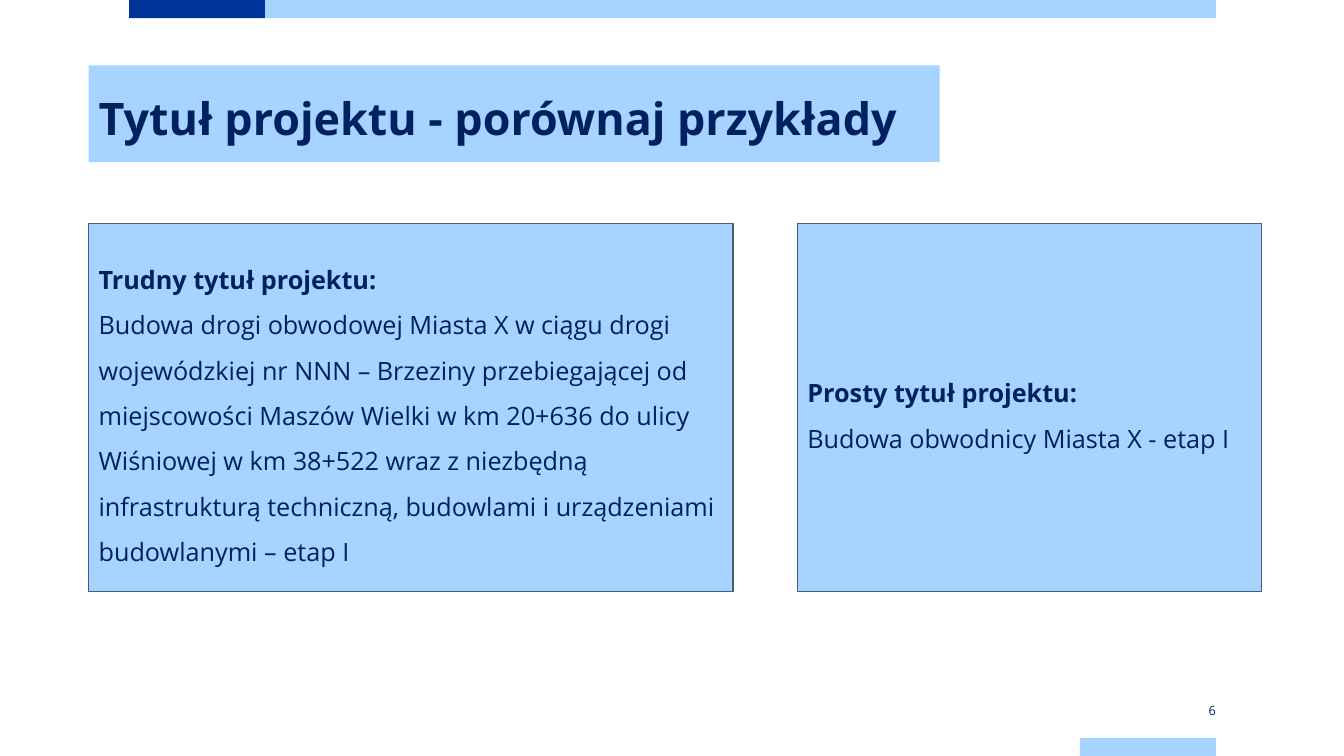
from dataclasses import dataclass

from pptx import Presentation
from pptx.dml.color import RGBColor
from pptx.enum.shapes import MSO_SHAPE
from pptx.enum.text import MSO_ANCHOR, PP_ALIGN
from pptx.util import Inches, Pt

RECT = MSO_SHAPE.RECTANGLE
TOP, MIDDLE = MSO_ANCHOR.TOP, MSO_ANCHOR.MIDDLE
LEFT, RIGHT = PP_ALIGN.LEFT, PP_ALIGN.RIGHT

FONT = "Open Sans"
NAVY, BLUE, SKY = "002060", "003399", "A6D3FF"
BORDER, NUMBER = "495C70", "002073"


@dataclass
class Box:
    left: float
    top: float
    width: float
    height: float


@dataclass
class Bar:
    box: Box
    fill: str


@dataclass
class Example:
    box: Box
    heading: str
    body: str


BARS = [
    Bar(Box(1.28, 0, 1.35, 0.18), BLUE),
    Bar(Box(2.63, 0, 9.43, 0.18), SKY),
    Bar(Box(10.71, 7.32, 1.35, 0.18), SKY),
    Bar(Box(0.88, 0.65, 8.44, 0.96), SKY),
]

EXAMPLES = [
    Example(
        Box(0.88, 2.22, 6.39, 3.65),
        "Trudny tytuł projektu:",
        "Budowa drogi obwodowej Miasta X w ciągu drogi wojewódzkiej nr NNN – "
        "Brzeziny przebiegającej od miejscowości Maszów Wielki w km 20+636 do "
        "ulicy Wiśniowej w km 38+522 wraz z niezbędną infrastrukturą techniczną, "
        "budowlami i urządzeniami budowlanymi – etap I",
    ),
    Example(
        Box(7.91, 2.22, 4.6, 3.65),
        "Prosty tytuł projektu:",
        "Budowa obwodnicy Miasta X - etap I",
    ),
]


def rgb(value: str) -> RGBColor:
    return RGBColor.from_string(value)


def place(box: Box) -> tuple:
    return Inches(box.left), Inches(box.top), Inches(box.width), Inches(box.height)


def add_run(p, text: str, size: float, color: str, bold: bool = False) -> None:
    r = p.add_run()
    r.text = text
    r.font.name = FONT
    r.font.size = Pt(size)
    r.font.bold = bold
    r.font.color.rgb = rgb(color)


def add_rect(s, box: Box, fill: str):
    sp = s.shapes.add_shape(RECT, *place(box))
    sp.shadow.inherit = False
    sp.fill.solid()
    sp.fill.fore_color.rgb = rgb(fill)
    sp.line.fill.background()
    return sp


def add_example(s, example: Example) -> None:
    sp = add_rect(s, example.box, SKY)
    sp.line.color.rgb = rgb(BORDER)
    sp.line.width = Pt(1)
    tf = sp.text_frame
    tf.word_wrap = True
    tf.vertical_anchor = MIDDLE
    lines = [(tf.paragraphs[0], example.heading, True),
             (tf.add_paragraph(), example.body, False)]
    for p, text, bold in lines:
        p.alignment = LEFT
        p.line_spacing = 1.5
        add_run(p, text, 18, NAVY, bold)


def add_label(s, box: Box, anchor: MSO_ANCHOR, align: PP_ALIGN):
    tf = s.shapes.add_textbox(*place(box)).text_frame
    tf.word_wrap = True
    tf.vertical_anchor = anchor
    tf.paragraphs[0].alignment = align
    return tf


def main() -> None:
    prs = Presentation()
    prs.slide_width, prs.slide_height = Inches(13.33), Inches(7.5)
    s = prs.slides.add_slide(prs.slide_layouts[6])

    for bar in BARS:
        add_rect(s, bar.box, bar.fill)

    title = add_label(s, Box(0.88, 0.85, 8.78, 0.64), TOP, LEFT)
    add_run(title.paragraphs[0], "Tytuł projektu - porównaj przykłady", 32, NAVY, True)

    for example in EXAMPLES:
        add_example(s, example)

    number = add_label(s, Box(10.71, 6.96, 1.35, 0.18), MIDDLE, RIGHT)
    number.margin_left = number.margin_right = Inches(0)
    number.margin_top = number.margin_bottom = Inches(0)
    add_run(number.paragraphs[0], "6", 9.1, NUMBER)

    prs.save("out.pptx")


if __name__ == "__main__":
    main()
